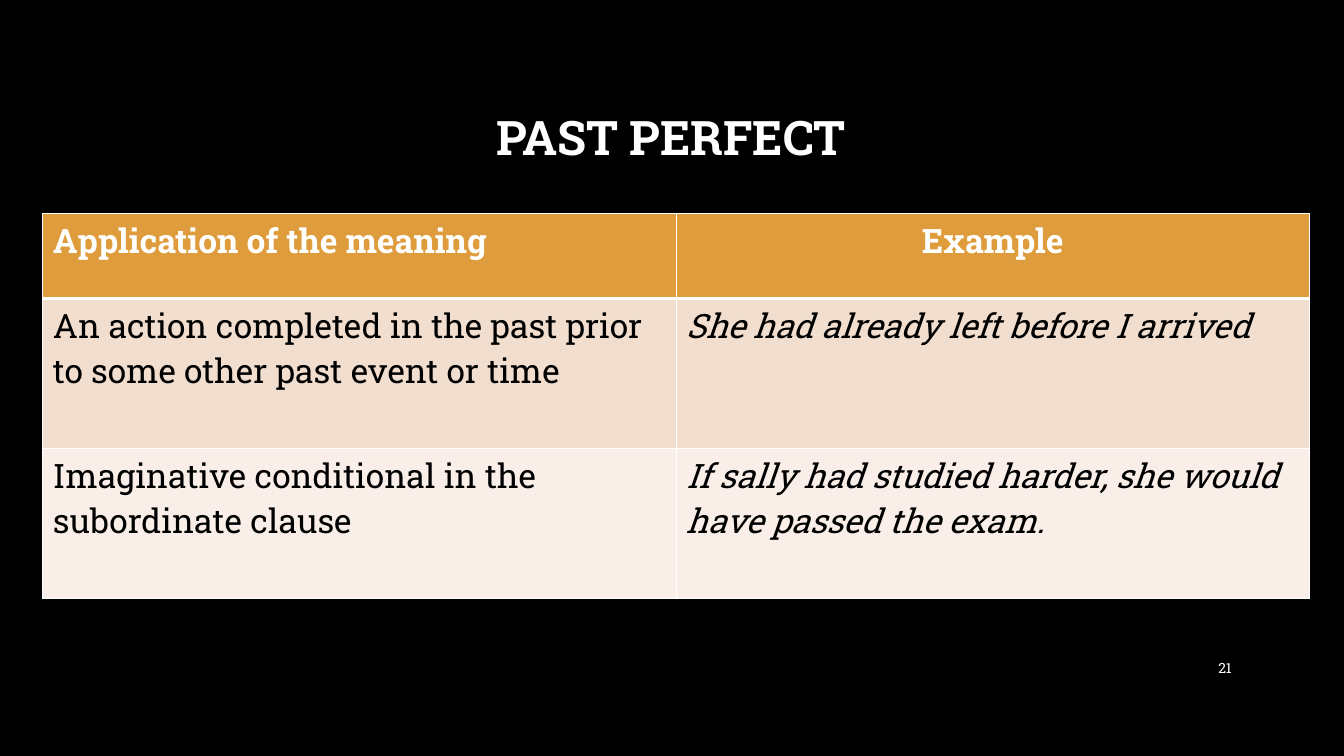
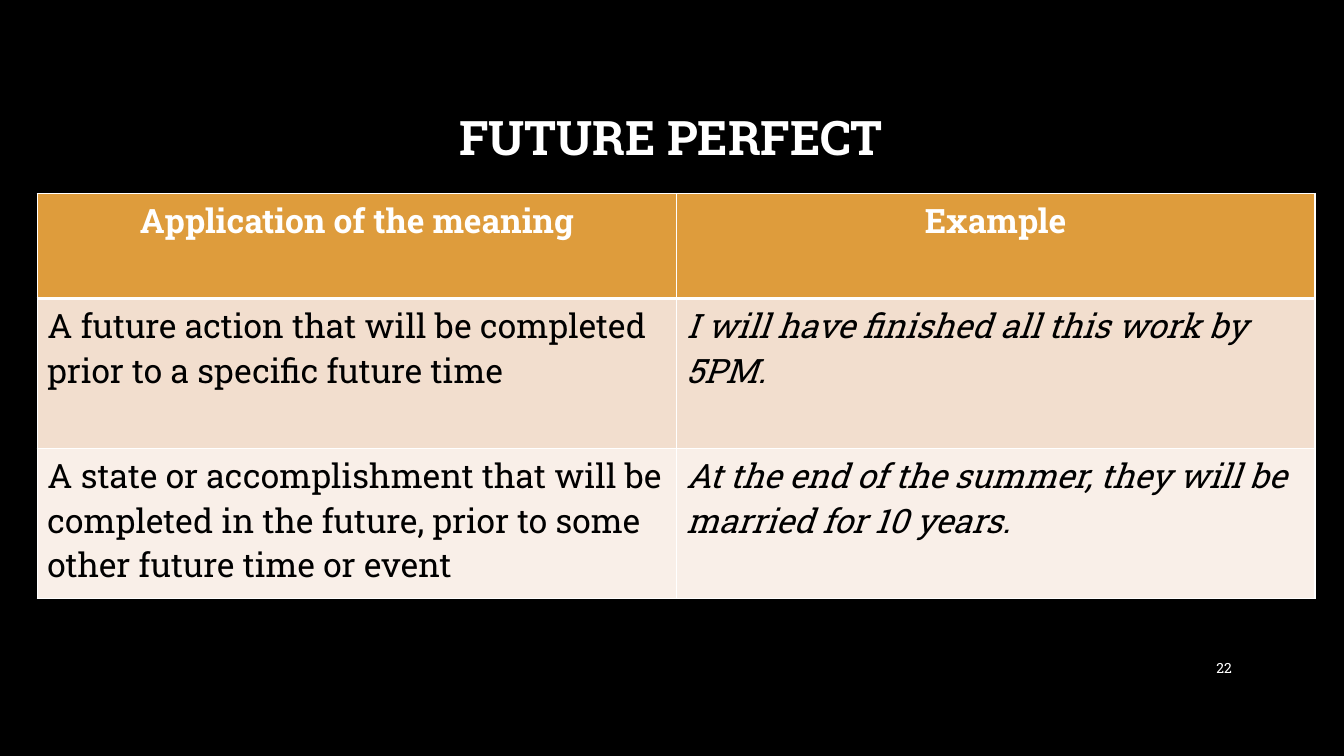
import pptx
import pptx.dml.color
import pptx.enum.text
import pptx.oxml
import pptx.oxml.ns
import pptx.util
from pptx.util import Cm

ALIGN = pptx.enum.text.PP_ALIGN
ANCHOR = pptx.enum.text.MSO_ANCHOR


def color(value):
    return pptx.dml.color.RGBColor.from_string(value)


def write(text_frame, text, *, size, fill, bold=False, italic=False,
          align=ALIGN.LEFT, line_spacing=None):
    paragraph = text_frame.paragraphs[0]
    paragraph.alignment = align
    if line_spacing:
        paragraph.line_spacing = line_spacing
    run = paragraph.add_run()
    run.text = text
    run.font.name = Deck.FONT
    run.font.size = pptx.util.Pt(size)
    run.font.bold = bold
    run.font.italic = italic
    run.font.color.rgb = color(fill)


def set_borders(cell, fill, widths):
    """Draw the cell's edges; widths maps L, R, T and B, in that order, to points."""
    properties = cell._tc.get_or_add_tcPr()
    for index, (side, width) in enumerate(widths.items()):
        line = pptx.oxml.parse_xml(
            f'<a:ln{side} {pptx.oxml.ns.nsdecls("a")} w="{pptx.util.Pt(width)}">'
            f'<a:solidFill><a:srgbClr val="{fill}"/></a:solidFill></a:ln{side}>')
        properties.insert(index, line)


class Deck:
    FONT = "Roboto Slab"
    BACKGROUND = "000000"
    LIGHT = "FFFFFF"
    DARK = "000000"
    HEADER = "DE9C3C"
    BANDS = ("F2DECE", "F9EFE8")
    TABLE_CENTER = 17.04
    TABLE_BOTTOM = 15.08
    BODY_ROW = 3.78

    def __init__(self):
        self.presentation = pptx.Presentation()
        self.presentation.slide_width = Cm(33.87)
        self.presentation.slide_height = Cm(19.05)
        self.slide = None

    def add_slide(self, title, number):
        self.slide = self.presentation.slides.add_slide(
            self.presentation.slide_layouts[6])
        background = self.slide.background.fill
        background.solid()
        background.fore_color.rgb = color(self.BACKGROUND)
        self.add_text(title, 2.54, 1.7, 28.75, 3.68, size=34, bold=True,
                      align=ALIGN.CENTER, line_spacing=0.9)
        self.add_text(str(number), 29.21, 16.33, 2.08, 1.02, size=10,
                      align=ALIGN.RIGHT)

    def add_text(self, text, left, top, width, height, **text_format):
        box = self.slide.shapes.add_textbox(Cm(left), Cm(top), Cm(width), Cm(height))
        box.text_frame.word_wrap = True
        box.text_frame.vertical_anchor = ANCHOR.MIDDLE
        write(box.text_frame, text, fill=self.LIGHT, **text_format)

    def add_table(self, rows, *, width, header_height, first_align):
        """Add a two-column table that stands on the shared bottom line."""
        heights = [header_height] + [self.BODY_ROW] * (len(rows) - 1)
        height = sum(heights)
        table = self.slide.shapes.add_table(
            len(rows), 2, Cm(self.TABLE_CENTER - width / 2),
            Cm(self.TABLE_BOTTOM - height), Cm(width), Cm(height)).table
        for row_index, texts in enumerate(rows):
            table.rows[row_index].height = Cm(heights[row_index])
            for column_index, text in enumerate(texts):
                align = ALIGN.LEFT
                if row_index == 0:
                    align = ALIGN.CENTER if column_index else first_align
                self.fill_cell(table.cell(row_index, column_index), text,
                               row_index, column_index, align)

    def fill_cell(self, cell, text, row_index, column_index, align):
        is_header = row_index == 0
        band = self.BANDS[(row_index - 1) % len(self.BANDS)]
        cell.fill.solid()
        cell.fill.fore_color.rgb = color(self.HEADER if is_header else band)
        set_borders(cell, self.LIGHT, {
            "L": 1, "R": 1,
            "T": 3 if row_index == 1 else 1,
            "B": 3 if is_header else 1})
        write(cell.text_frame, text, size=24, bold=is_header,
              fill=self.LIGHT if is_header else self.DARK,
              italic=not is_header and column_index == 1, align=align)


def main():
    deck = Deck()
    header = ("Application of the meaning", "Example")

    deck.add_slide("PAST PERFECT", 21)
    deck.add_table([
        header,
        ("An action completed in the past prior to some other past event or time",
         "She had already left before I arrived"),
        ("Imaginative conditional in the subordinate clause",
         "If sally had studied harder, she would have passed the exam."),
    ], width=31.92, header_height=2.14, first_align=ALIGN.LEFT)

    deck.add_slide("FUTURE PERFECT", 22)
    deck.add_table([
        header,
        ("A future action that will be completed prior to a specific future time",
         "I will have finished all this work by 5PM."),
        ("A state or accomplishment that will be completed in the future, "
         "prior to some other future time or event",
         "At the end of the summer, they will be married for 10 years."),
    ], width=32.2, header_height=2.64, first_align=ALIGN.CENTER)

    deck.presentation.save("out.pptx")


if __name__ == "__main__":
    main()
